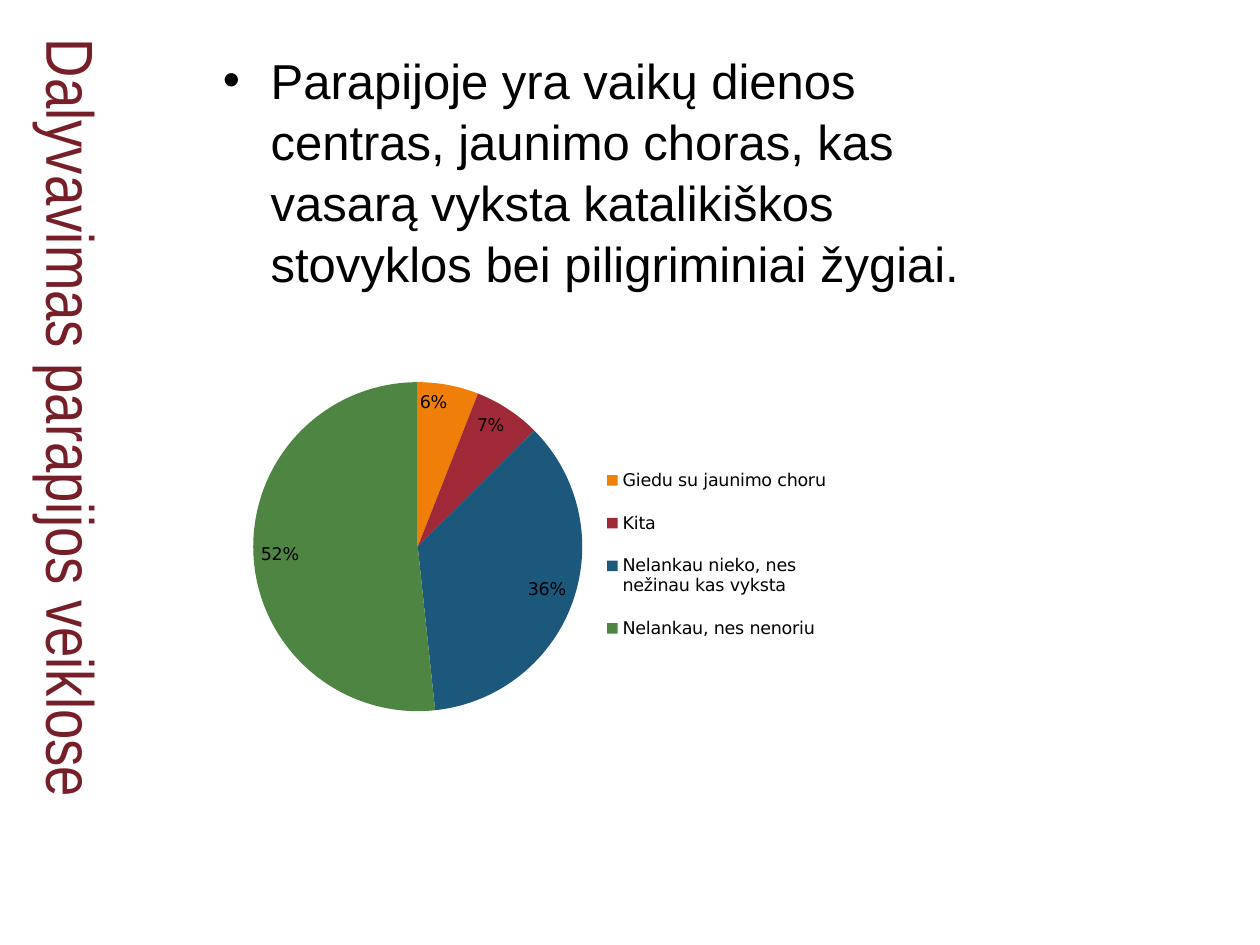
from dataclasses import dataclass

from lxml import etree
from pptx import Presentation
from pptx.chart.data import CategoryChartData
from pptx.dml.color import RGBColor
from pptx.enum.chart import XL_CHART_TYPE, XL_LABEL_POSITION, XL_LEGEND_POSITION
from pptx.enum.text import MSO_ANCHOR
from pptx.oxml.ns import qn
from pptx.util import Inches, Pt

PIE = XL_CHART_TYPE.PIE
INSIDE = XL_LABEL_POSITION.INSIDE_END
RIGHT = XL_LEGEND_POSITION.RIGHT
MIDDLE = MSO_ANCHOR.MIDDLE


@dataclass(frozen=True)
class Theme:
    """Colours, fonts and type sizes of the slide."""
    title: tuple = ("Arial Narrow", 38, "771F28")
    body: tuple = ("Arial", 28, "000000")
    chart: tuple = ("DejaVu Sans", 10, "000000")


THEME = Theme()
TITLE = "Dalyvavimas parapijos veiklose"
BODY = ("Parapijoje yra vaikų dienos centras, jaunimo choras, kas vasarą "
        "vyksta katalikiškos stovyklos bei piligriminiai žygiai.")
SLICES = [
    ("Giedu su jaunimo choru", 6, "F07F09"),
    ("Kita", 6.6, "9F2936"),
    ("Nelankau nieko, nes nežinau kas vyksta", 36, "1B587C"),
    ("Nelankau, nes nenoriu", 52, "4E8542"),
]


def set_font(font, style):
    """Apply a theme style to a font."""
    font.name, size, color = style
    font.size = Pt(size)
    font.color.rgb = RGBColor.from_string(color)


def add_text(slide, box, text, style):
    """Place wrapped text in a box and return its frame."""
    frame = slide.shapes.add_textbox(*map(Inches, box)).text_frame
    frame.word_wrap = True
    frame.text = text
    set_font(frame.paragraphs[0].runs[0].font, style)
    return frame


def add_title(slide, box):
    """Place the title that runs down the left edge."""
    frame = add_text(slide, box, TITLE, THEME.title)
    frame.vertical_anchor = MIDDLE
    frame._txBody.bodyPr.set("vert", "eaVert")


def add_body(slide, box):
    """Place the bulleted paragraph."""
    para = add_text(slide, box, BODY, THEME.body).paragraphs[0]
    para.line_spacing = 1.04
    props = para._p.get_or_add_pPr()
    props.set("marL", str(Inches(0.38)))
    props.set("indent", str(Inches(-0.38)))
    etree.SubElement(props, qn("a:buFont")).set("typeface", "Arial")
    etree.SubElement(props, qn("a:buChar")).set("char", "•")


def make_layout(area, inner=False):
    """Return a manual layout for a part of a chart."""
    layout = etree.Element(qn("c:layout"))
    manual = etree.SubElement(layout, qn("c:manualLayout"))
    rows = [("layoutTarget", "inner")] if inner else []
    rows += [("xMode", "edge"), ("yMode", "edge"), *zip("xywh", area)]
    for tag, val in rows:
        etree.SubElement(manual, qn("c:" + tag)).set("val", str(val))
    return layout


def add_pie(slide, box):
    """Place the pie chart with its labels and legend."""
    data = CategoryChartData()
    data.categories = [name for name, _, _ in SLICES]
    data.add_series("Series 1", [val for _, val, _ in SLICES])
    chart = slide.shapes.add_chart(PIE, *map(Inches, box), data).chart
    chart.has_title = False
    set_font(chart.font, THEME.chart)

    plot = chart.plots[0]
    plot.vary_by_categories = True
    series = plot.series[0]
    for index, (_, _, color) in enumerate(SLICES):
        fill = series.points[index].format.fill
        fill.solid()
        fill.fore_color.rgb = RGBColor.from_string(color)
    labels = series.data_labels
    labels.show_value = False
    labels.show_percentage = True
    labels.number_format = "0%"
    labels.number_format_is_linked = False
    labels.position = INSIDE
    set_font(labels.font, THEME.chart)

    area = chart._chartSpace.chart.plotArea
    for old in area.findall(qn("c:layout")):
        area.remove(old)
    area.insert(0, make_layout((0.03, 0.07, 0.49, 0.85), True))

    chart.has_legend = True
    legend = chart.legend
    legend.position = RIGHT
    legend.include_in_layout = False
    set_font(legend.font, THEME.chart)
    for old in legend._element.findall(qn("c:layout")):
        legend._element.remove(old)
    place = legend._element.find(qn("c:legendPos"))
    place.addnext(make_layout((0.54, 0.24, 0.36, 0.55)))


def main():
    """Build and save the slide."""
    deck = Presentation()
    deck.slide_width, deck.slide_height = Inches(10), Inches(7.5)
    slide = deck.slides.add_slide(deck.slide_layouts[6])
    add_title(slide, (0.12, 0.21, 0.92, 7.27))
    add_body(slide, (1.67, 0.33, 6.58, 6.83))
    add_pie(slide, (1.85, 2.81, 5.33, 3.09))
    deck.save("out.pptx")


if __name__ == "__main__":
    main()
